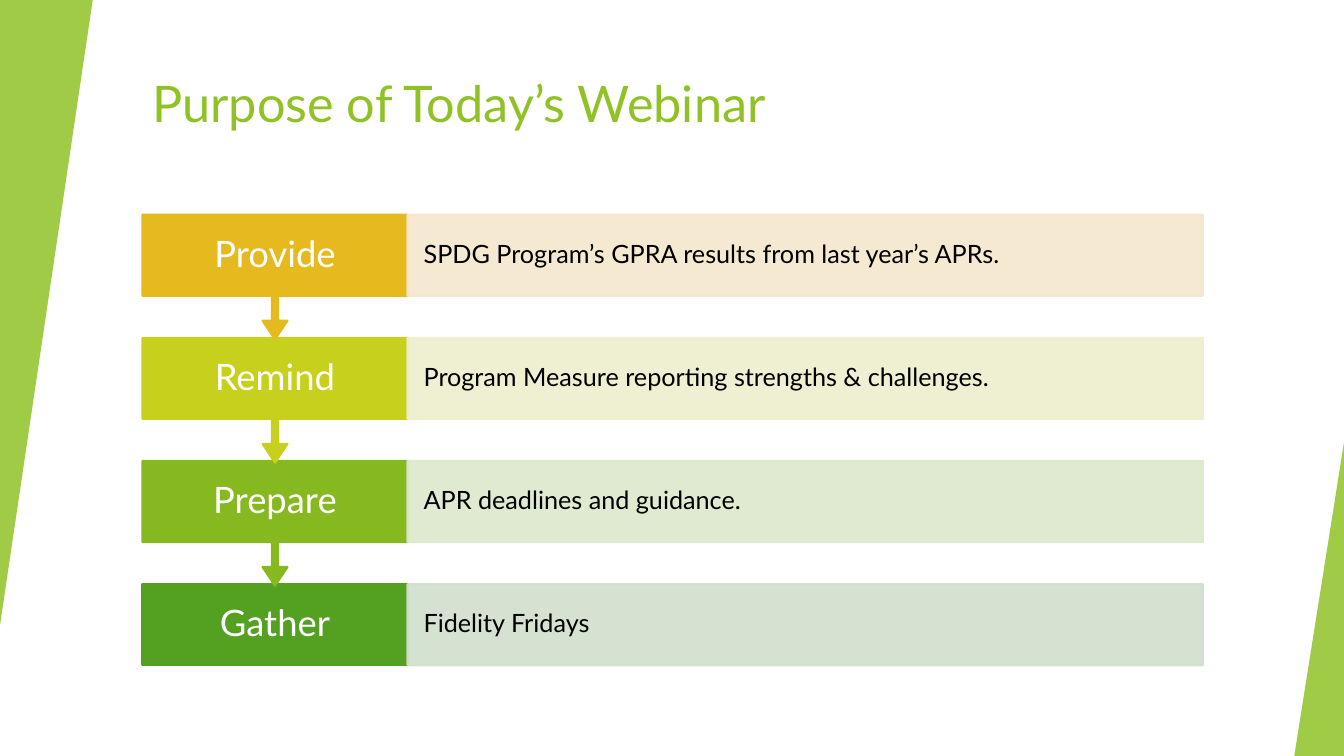
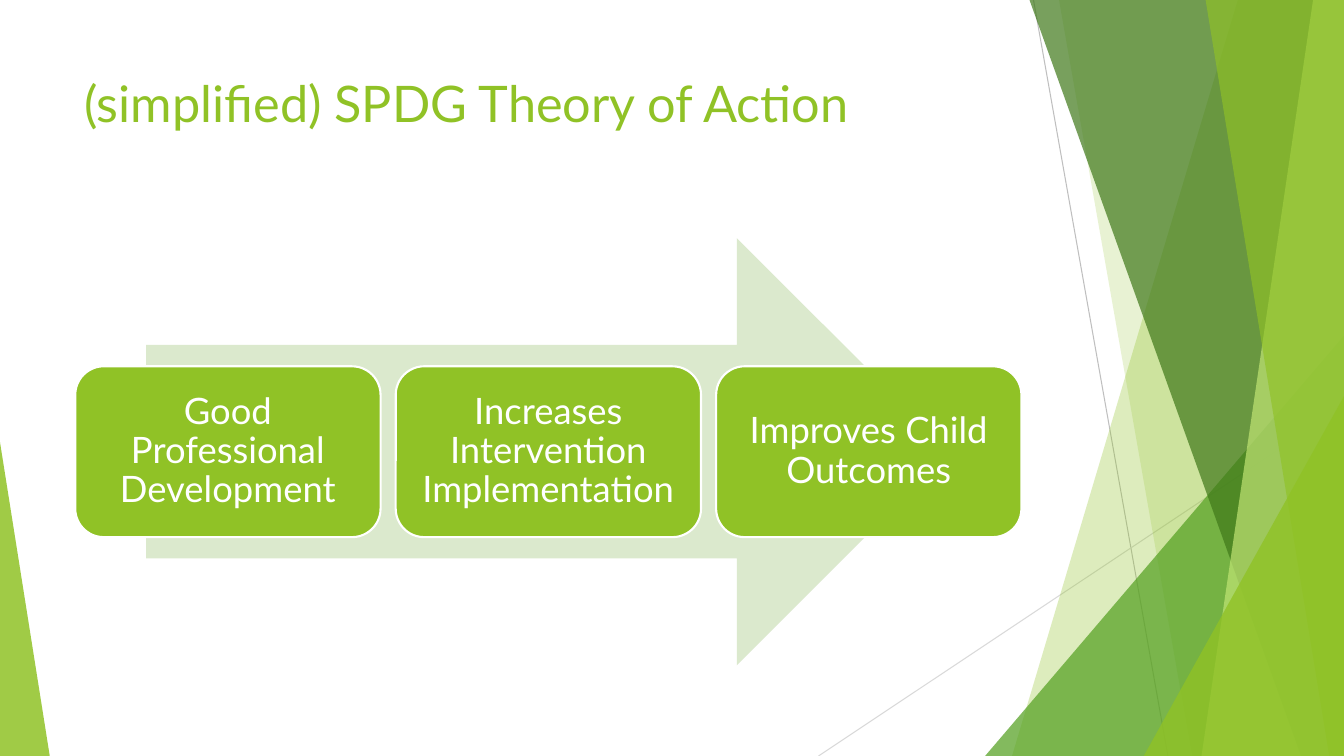
from dataclasses import dataclass

from lxml import etree
from pptx import Presentation
from pptx.dml.color import RGBColor
from pptx.enum.shapes import MSO_CONNECTOR, MSO_SHAPE
from pptx.enum.text import MSO_ANCHOR, PP_ALIGN
from pptx.oxml.ns import qn
from pptx.util import Inches, Pt

RECTANGLE, ROUNDED = MSO_SHAPE.RECTANGLE, MSO_SHAPE.ROUNDED_RECTANGLE
TRIANGLE, RIGHT_ARROW = MSO_SHAPE.ISOSCELES_TRIANGLE, MSO_SHAPE.RIGHT_ARROW
DOWN_CALLOUT = MSO_SHAPE.DOWN_ARROW_CALLOUT
STRAIGHT = MSO_CONNECTOR.STRAIGHT
LEFT, CENTER = PP_ALIGN.LEFT, PP_ALIGN.CENTER
TOP, MIDDLE = MSO_ANCHOR.TOP, MSO_ANCHOR.MIDDLE


@dataclass(frozen=True)
class Theme:
    font: str = "Lato"
    title_size: int = 36
    label_size: int = 26
    body_size: int = 18
    outline: float = 1.5
    hairline: float = 0.75
    green: str = "90C226"
    leaf: str = "54A021"
    forest: str = "3F7819"
    lime: str = "C0E474"
    pale: str = "DBE9CD"
    white: str = "FFFFFF"
    black: str = "000000"
    gray: str = "BFBFBF"
    light_gray: str = "D9D9D9"


@dataclass(frozen=True)
class Box:
    """A region in inches."""
    left: float
    top: float
    width: float
    height: float

    def area(self, left, top, width, height):
        """Sub-region given in percent of this one."""
        return Box(self.left + self.width * left / 100,
                   self.top + self.height * top / 100,
                   self.width * width / 100, self.height * height / 100)

    def point(self, x, y):
        """Point given in percent of this region."""
        corner = self.area(x, y, 0, 0)
        return Inches(corner.left), Inches(corner.top)

    def lengths(self):
        return [Inches(length) for length in
                (self.left, self.top, self.width, self.height)]


THEME = Theme()
PAGE = Box(0, 0, 13.33, 7.5)

STEPS = [
    ("Provide", "SPDG Program’s GPRA results from last year’s APRs.",
     "E6B91E", "F5E7CD"),
    ("Remind", "Program Measure reporting strengths & challenges.",
     "C7D01D", "EEEFCC"),
    ("Prepare", "APR deadlines and guidance.", "86B820", "DCE8CC"),
    ("Gather", "Fidelity Fridays", THEME.leaf, "D1DFCD"),
]
OUTCOMES = ["Good Professional Development",
            "Increases Intervention Implementation",
            "Improves Child Outcomes"]


def paint(shape, fill, line=None, opacity=100):
    shape.shadow.inherit = False
    shape.fill.solid()
    shape.fill.fore_color.rgb = RGBColor.from_string(fill)
    if line:
        shape.line.color.rgb = RGBColor.from_string(line)
        shape.line.width = Pt(THEME.outline)
    else:
        shape.line.fill.background()
    if opacity < 100:
        for color in shape._element.spPr.iter(qn("a:srgbClr")):
            etree.SubElement(color, qn("a:alpha")).set("val", str(opacity * 1000))


def add_block(slide, preset, box, fill, line=None, opacity=100, adjustments=()):
    shape = slide.shapes.add_shape(preset, *box.lengths())
    for index, value in enumerate(adjustments):
        shape.adjustments[index] = value
    paint(shape, fill, line, opacity)
    return shape


def write(shape, text, size, color, align=LEFT, anchor=MIDDLE,
          margins=(0.1, 0.05), spacing=0.9):
    frame = shape.text_frame
    frame.word_wrap = True
    frame.vertical_anchor = anchor
    frame.margin_left = frame.margin_right = Inches(margins[0])
    frame.margin_top = frame.margin_bottom = Inches(margins[1])
    paragraph = frame.paragraphs[0]
    paragraph.text = text
    paragraph.alignment = align
    paragraph.line_spacing = spacing
    paragraph.font.name = THEME.font
    paragraph.font.size = Pt(size)
    paragraph.font.color.rgb = RGBColor.from_string(color)


def add_title(slide, box, text):
    title = slide.shapes.add_textbox(*box.lengths())
    write(title, text, THEME.title_size, THEME.green, anchor=TOP, spacing=1.0)


def add_wedge(slide, box, apex, color=THEME.green, opacity=85):
    """Right-angled triangle; apex is 0 for left and 1 for right."""
    return add_block(slide, TRIANGLE, box, color, opacity=opacity,
                     adjustments=[apex])


def add_hairline(slide, start, end, color):
    line = slide.shapes.add_connector(STRAIGHT, *start, *end)
    line.line.color.rgb = RGBColor.from_string(color)
    line.line.width = Pt(THEME.hairline)
    etree.SubElement(line._element.spPr, qn("a:effectLst"))


def add_ribbon(slide, box, top_x, bottom_x, color, opacity):
    """Band from a slanted left edge to the right edge of the box."""
    builder = slide.shapes.build_freeform(*box.point(top_x, 0))
    builder.add_line_segments([box.point(100, 0), box.point(100, 100),
                               box.point(bottom_x, 100)], close=True)
    paint(builder.convert_to_shape(), color, opacity=opacity)


def add_facets(slide, box):
    """Crossing translucent bands on the right, and a wedge on the left."""
    add_hairline(slide, box.point(76.9, 0), box.point(86.9, 100), THEME.gray)
    add_hairline(slide, box.point(100, 53.7), box.point(60.9, 100),
                 THEME.light_gray)
    add_ribbon(slide, box, 92.1, 75.3, THEME.green, 30)
    add_ribbon(slide, box, 78.8, 88.7, THEME.green, 20)
    add_wedge(slide, box.area(73.3, 44.4, 26.7, 55.6), 1, THEME.leaf, 72)
    add_ribbon(slide, box, 76.6, 96.8, THEME.forest, 70)
    add_ribbon(slide, box, 97.7, 89.4, THEME.lime, 70)
    add_ribbon(slide, box, 89.7, 98.9, THEME.green, 65)
    add_wedge(slide, box.area(85.1, 52.4, 14.9, 47.6), 1, opacity=80)
    add_wedge(slide, box.area(0, 58.5, 3.7, 41.5), 0)


def add_side_wedges(slide, box):
    add_wedge(slide, box.area(0, 0, 6.9, 82.7), 1).rotation = 180
    add_wedge(slide, box.area(96.3, 58.5, 3.7, 41.5), 1)


def add_steps(slide, box, steps):
    """Labelled rows, each label pointing down to the next."""
    row_share, label_share, callout_share = 18, 25, 0.65
    last = len(steps) - 1
    pitch = (100 - row_share) / last
    for index in range(last, -1, -1):
        label, detail, color, tint = steps[index]
        top = index * pitch
        if index == last:
            head = add_block(slide, RECTANGLE,
                             box.area(0, top, label_share, row_share), color, color)
        else:
            head = add_block(
                slide, DOWN_CALLOUT,
                box.area(0, top, label_share, row_share / callout_share),
                color, color, adjustments=[0.05, 0.1, 0.15, callout_share])
        write(head, label, THEME.label_size, THEME.white, CENTER,
              margins=(0.19, 0.1))
        body = add_block(
            slide, RECTANGLE,
            box.area(label_share, top, 100 - label_share, row_share),
            tint, tint, opacity=90)
        write(body, detail, THEME.body_size, THEME.black, margins=(0.16, 0.1))


def add_arrow_process(slide, box, labels):
    """Equal cards in a row over a wide arrow."""
    add_block(slide, RIGHT_ARROW, box.area(7.5, 0, 85, 100), THEME.pale)
    gap = 1.6
    width = (100 - gap * (len(labels) - 1)) / len(labels)
    for index, label in enumerate(labels):
        card = add_block(slide, ROUNDED,
                         box.area(index * (width + gap), 30, width, 40),
                         THEME.green, THEME.white)
        write(card, label, THEME.label_size, THEME.white, CENTER,
              margins=(0.11, 0.11))


def purpose_slide(slide, page):
    add_title(slide, page.area(10.6, 8.9, 83.6, 16), "Purpose of Today’s Webinar")
    add_side_wedges(slide, page)
    add_steps(slide, page.area(10.6, 28.4, 78.9, 59.6), STEPS)


def theory_slide(slide, page):
    add_facets(slide, page)
    add_title(slide, page.area(5.55, 8.9, 70.5, 19.2),
              "(simplified) SPDG Theory of Action")
    add_arrow_process(slide, page.area(5.6, 31.5, 70.4, 56.5), OUTCOMES)


def main():
    presentation = Presentation()
    presentation.slide_width = Inches(PAGE.width)
    presentation.slide_height = Inches(PAGE.height)
    blank = presentation.slide_layouts[6]
    for build in (purpose_slide, theory_slide):
        build(presentation.slides.add_slide(blank), PAGE)
    presentation.save("out.pptx")


if __name__ == "__main__":
    main()
